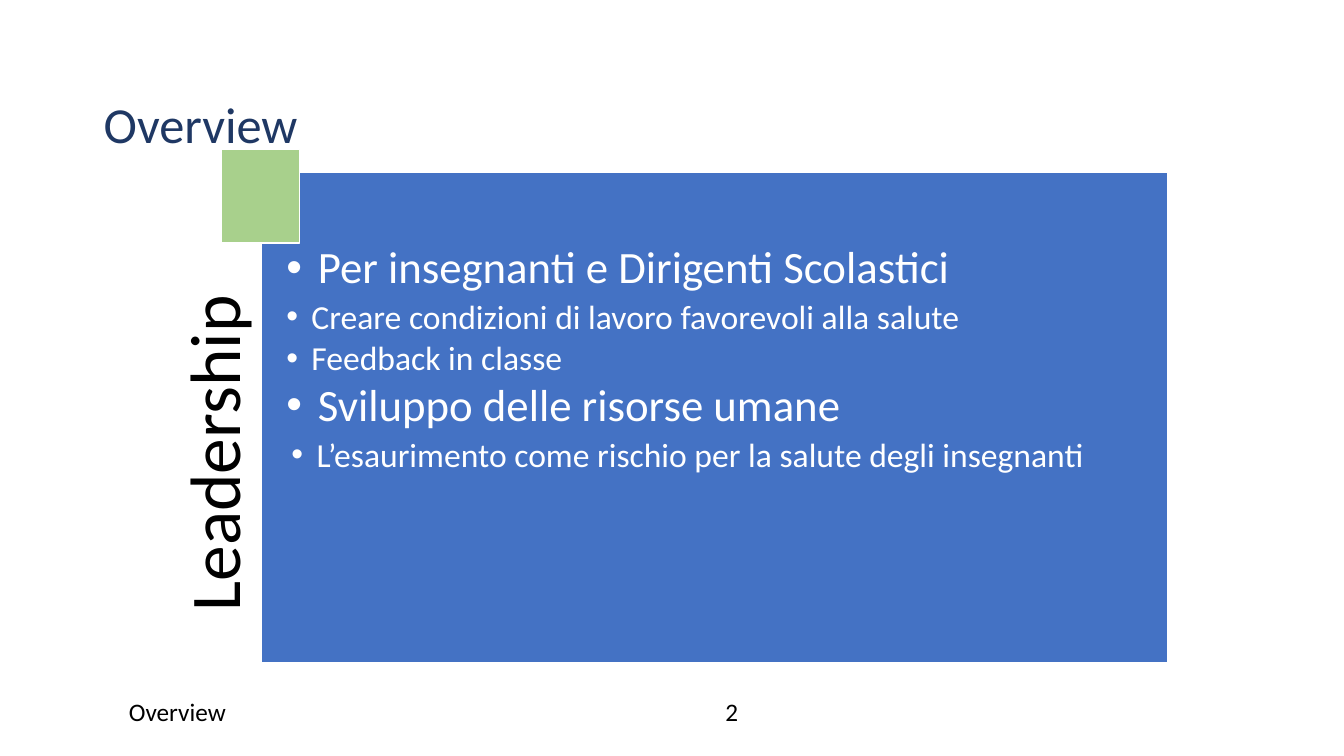
from lxml.etree import SubElement
from pptx import Presentation
from pptx.dml.color import RGBColor
from pptx.enum.shapes import MSO_SHAPE
from pptx.enum.text import MSO_ANCHOR, PP_ALIGN
from pptx.oxml.ns import qn
from pptx.util import Pt


def color(hex_value):
    return RGBColor.from_string(hex_value)


def add_bullet(paragraph, hex_value, margin, hanging):
    properties = paragraph._p.get_or_add_pPr()
    properties.set("marL", str(Pt(margin)))
    properties.set("indent", str(-Pt(hanging)))
    bullet_color = SubElement(properties, qn("a:buClr"))
    SubElement(bullet_color, qn("a:srgbClr"), val=hex_value)
    SubElement(properties, qn("a:buFont"), typeface="Arial")
    SubElement(properties, qn("a:buChar"), char="•")


def write(paragraph, text, size=18, ink="000000", font="Calibri", align=PP_ALIGN.LEFT,
          line_spacing=0.9, space_before=0, level=0, bullet=None):
    paragraph.level = level
    if bullet:
        add_bullet(paragraph, ink, *bullet)
    paragraph.alignment = align
    paragraph.line_spacing = line_spacing
    paragraph.space_before = Pt(space_before)
    run = paragraph.add_run()
    run.text = text
    run.font.size = Pt(size)
    run.font.name = font
    run.font.color.rgb = color(ink)


class OverviewSlide:
    """Holds the shared style and the slide being built."""

    white = "FFFFFF"
    navy = "1F3864"
    blue = "4472C4"
    green = "A8D08C"

    def __init__(self, presentation):
        self.slide = presentation.slides.add_slide(presentation.slide_layouts[6])

    def prepare_frame(self, shape, insets):
        frame = shape.text_frame
        frame.word_wrap = True
        frame.vertical_anchor = MSO_ANCHOR.TOP
        (frame.margin_left, frame.margin_top,
         frame.margin_right, frame.margin_bottom) = map(Pt, insets)
        return frame

    def label(self, text, box, insets=(7.2, 3.6, 7.2, 3.6), rotation=0, **style):
        shape = self.slide.shapes.add_textbox(*map(Pt, box))
        shape.rotation = rotation
        frame = self.prepare_frame(shape, insets)
        write(frame.paragraphs[0], text, **style)

    def rectangle(self, box, fill):
        shape = self.slide.shapes.add_shape(MSO_SHAPE.RECTANGLE, *map(Pt, box))
        shape.shadow.inherit = False
        shape.fill.solid()
        shape.fill.fore_color.rgb = color(fill)
        shape.line.color.rgb = color(self.white)
        shape.line.width = Pt(1)
        return shape

    def bullet_panel(self, box, insets, items):
        frame = self.prepare_frame(self.rectangle(box, self.blue), insets)
        for index, (text, style) in enumerate(items):
            paragraph = frame.add_paragraph() if index else frame.paragraphs[0]
            write(paragraph, text, ink=self.white, **style)


def main():
    presentation = Presentation()
    presentation.slide_width, presentation.slide_height = Pt(960), Pt(540)
    overview = OverviewSlide(presentation)

    topic = dict(size=32, level=1, bullet=(22.5, 22.5))
    detail = dict(size=24, level=1, bullet=(18, 18))
    nested = dict(size=24, level=2, bullet=(21.6, 18))

    overview.label("Overview", (67, 67.7, 828, 69.8), size=36, ink=overview.navy)
    overview.label("Leadership", (18, 268.6, 278, 59), insets=(0, 0, 52, 0),
                   rotation=270, size=51, align=PP_ALIGN.RIGHT)
    overview.bullet_panel((186.5, 123.1, 647.3, 350), (18, 52, 18, 18), [
        ("Per insegnanti e Dirigenti Scolastici", topic),
        ("Creare condizioni di lavoro favorevoli alla salute", detail | {"space_before": 4.8}),
        ("Feedback in classe", detail | {"space_before": 3.6}),
        ("Sviluppo delle risorse umane", topic | {"space_before": 3.6}),
        ("L’esaurimento come rischio per la salute degli insegnanti",
         nested | {"space_before": 4.8}),
    ])
    overview.rectangle((158.4, 106.6, 55.5, 67), overview.green)
    overview.label("Overview", (85, 494, 324, 29), line_spacing=1)
    overview.label("2", (414.7, 494, 216, 29), align=PP_ALIGN.CENTER, line_spacing=1)

    presentation.save("out.pptx")


if __name__ == "__main__":
    main()
